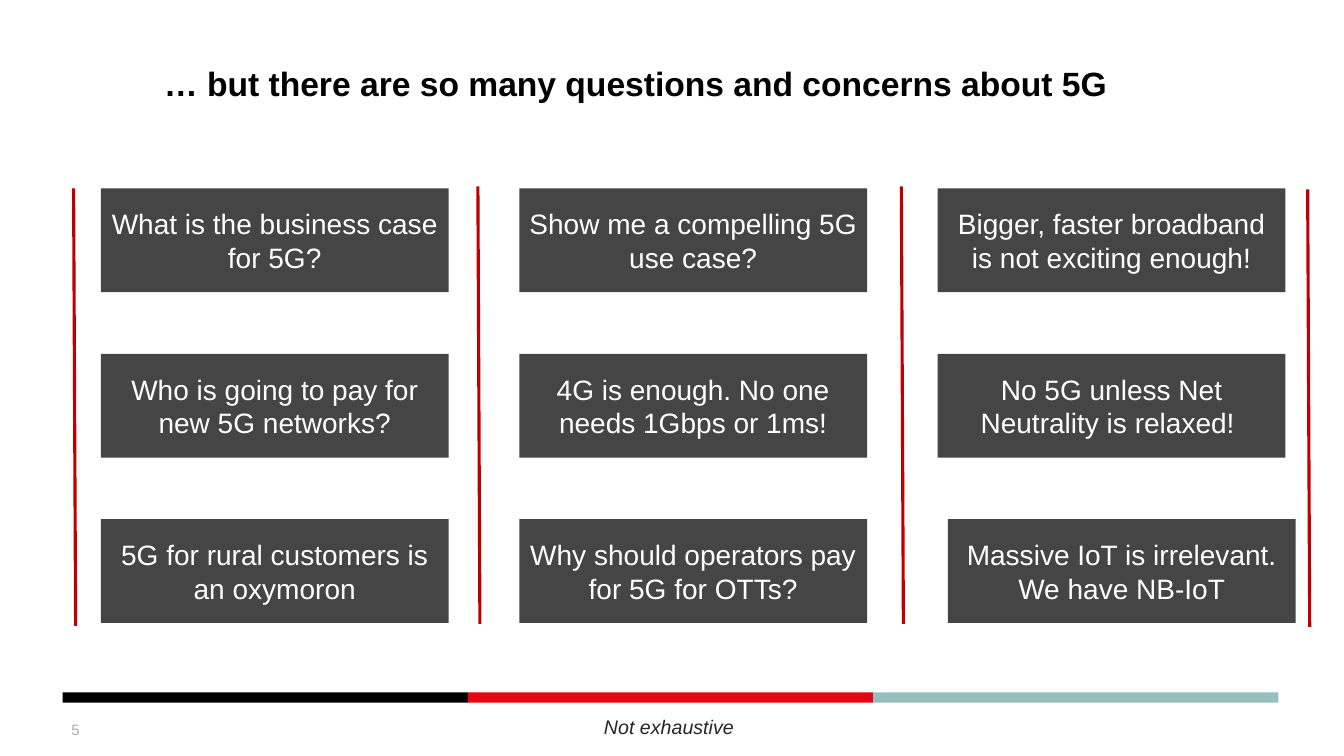
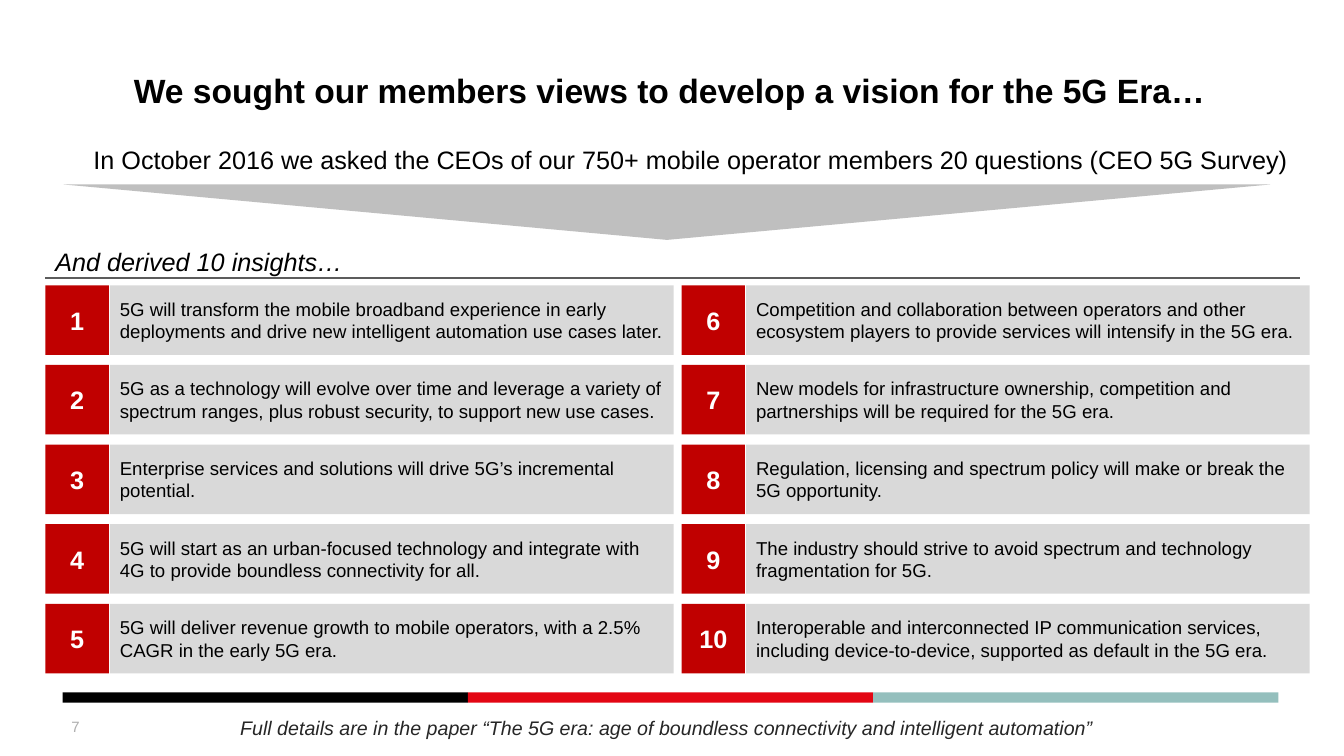
from lxml import etree
from pptx import Presentation
from pptx.dml.color import RGBColor
from pptx.enum.shapes import MSO_CONNECTOR, MSO_SHAPE
from pptx.enum.text import MSO_ANCHOR, PP_ALIGN
from pptx.oxml.ns import qn
from pptx.util import Inches, Pt

RECT, TRIANGLE = MSO_SHAPE.RECTANGLE, MSO_SHAPE.ISOSCELES_TRIANGLE
STRAIGHT = MSO_CONNECTOR.STRAIGHT
LEFT, CENTER = PP_ALIGN.LEFT, PP_ALIGN.CENTER
TOP, MIDDLE = MSO_ANCHOR.TOP, MSO_ANCHOR.MIDDLE

FONT = "Arial"
BLACK = RGBColor(0x00, 0x00, 0x00)
WHITE = RGBColor(0xFF, 0xFF, 0xFF)
RED = RGBColor(0xE3, 0x06, 0x13)
TEAL = RGBColor(0x94, 0xBF, 0xBD)
DARK_RED = RGBColor(0xC0, 0x00, 0x00)
CHARCOAL = RGBColor(0x45, 0x45, 0x45)
INK = RGBColor(0x26, 0x26, 0x26)
RULE_GREY = RGBColor(0x5C, 0x5C, 0x5C)
PAGE_GREY = RGBColor(0xAE, 0xAE, 0xAE)
ARROW_GREY = RGBColor(0xBF, 0xBF, 0xBF)
PANEL_GREY = RGBColor(0xD9, 0xD9, 0xD9)

SLIDE_W, SLIDE_H = 13.33, 7.5
BAND_COLORS = [BLACK, RED, TEAL]
BAND_LEFT, BAND_TOP, BAND_W, BAND_H = 0.62, 6.87, 4.02, 0.1

CONCERNS = {
    "title": "… but there are so many questions and concerns about 5G",
    "title_at": (1.53, 0.42),
    "page": "5",
    "page_top": 7.04,
    "footer": "Not exhaustive",
    "footer_at": (3.46, 7.04, 6.35, 0.34),
}
CARDS = [
    ["What is the business case for 5G?",
     "Show me a compelling 5G use case?",
     "Bigger, faster broadband is not exciting enough!"],
    ["Who is going to pay for new 5G networks?",
     "4G is enough. No one needs 1Gbps or 1ms!",
     "No 5G unless Net Neutrality is relaxed! "],
    ["5G for rural customers is an oxymoron",
     "Why should operators pay for 5G for OTTs?",
     "Massive IoT is irrelevant. We have NB-IoT"],
]
CARD_LEFT, CARD_TOP, CARD_W, CARD_H = 1, 1.87, 3.45, 1.03
CARD_STEP_X, CARD_STEP_Y = 4.15, 1.64
CARD_NUDGE = {(2, 2): 0.1}
DIVIDERS = [(0.73, 1.87), (4.74, 1.85), (8.94, 1.85), (12.97, 1.88)]
DIVIDER_SLANT, DIVIDER_H = 0.02, 4.34

INSIGHTS = {
    "title": "We sought our members views to develop a vision for the 5G Era…",
    "title_at": (1.23, 0.49),
    "page": "7",
    "page_top": 7.01,
    "footer": "Full details are in the paper “The 5G era: age of boundless "
              "connectivity and intelligent automation”",
    "footer_at": (1.87, 7.05, 9.49, 0.34),
}
SURVEY = ("In October 2016 we asked the CEOs of our 750+ mobile operator "
          "members 20 questions (CEO 5G Survey)")
LEAD_IN = "And derived 10 insights…"
FINDINGS = [
    "5G will transform the mobile broadband experience in early deployments "
    "and drive new intelligent automation use cases later.",
    "5G as a technology will evolve over time and leverage a variety of "
    "spectrum ranges, plus robust security, to support new use cases.",
    "Enterprise services and solutions will drive 5G’s incremental potential.",
    "5G will start as an urban-focused technology and integrate with 4G to "
    "provide boundless connectivity for all.",
    "5G will deliver revenue growth to mobile operators, with a 2.5% CAGR in "
    "the early 5G era.",
    "Competition and collaboration between operators and other\n"
    "ecosystem players to provide services will intensify in the 5G era.",
    "New models for infrastructure ownership, competition and\n"
    "partnerships will be required for the 5G era.",
    "Regulation, licensing and spectrum policy will make or break the 5G "
    "opportunity.",
    "The industry should strive to avoid spectrum and technology "
    "fragmentation for 5G.",
    "Interoperable and interconnected IP communication services, including "
    "device-to-device, supported as default in the 5G era.",
]
FINDING_ROWS = 5
FINDING_LEFT, FINDING_TOP = 0.45, 2.83
FINDING_STEP_X, FINDING_STEP_Y = 6.31, 0.79
NUMBER_W, PANEL_OFFSET, PANEL_W, FINDING_H = 0.63, 0.64, 5.59, 0.69


def write(sp, text, size=18, color=BLACK, bold=False, italic=False,
          align=LEFT, anchor=MIDDLE, insets=(0.1, 0.1)):
    tf = sp.text_frame
    tf.word_wrap = True
    tf.vertical_anchor = anchor
    tf.margin_left, tf.margin_right = map(Inches, insets)
    tf.margin_top = tf.margin_bottom = Inches(0.05)
    for i, line in enumerate(text.split("\n")):
        p = tf.paragraphs[0] if i == 0 else tf.add_paragraph()
        p.alignment = align
        r = p.add_run()
        r.text = line
        font = r.font
        font.name, font.size = FONT, Pt(size)
        font.bold, font.italic = bold, italic
        font.color.rgb = color


def add_text(s, box, text, **fmt):
    write(s.shapes.add_textbox(*map(Inches, box)), text, **fmt)


def add_block(s, box, fill, text="", kind=RECT, **fmt):
    sp = s.shapes.add_shape(kind, *map(Inches, box))
    sp.shadow.inherit = False
    sp.fill.solid()
    sp.fill.fore_color.rgb = fill
    sp.line.fill.background()
    if text:
        write(sp, text, **fmt)
    return sp


def add_line(s, x1, y1, x2, y2, color, width):
    line = s.shapes.add_connector(STRAIGHT, *map(Inches, (x1, y1, x2, y2)))
    line.line.color.rgb = color
    line.line.width = Pt(width)
    etree.SubElement(line._element.spPr, qn("a:effectLst"))


def add_base(prs, info):
    s = prs.slides.add_slide(prs.slide_layouts[6])
    for i, color in enumerate(BAND_COLORS):
        add_block(s, (BAND_LEFT + i * BAND_W, BAND_TOP, BAND_W, BAND_H), color)
    add_text(s, (*info["title_at"], 11.07, 0.8), info["title"],
             size=24, bold=True)
    add_text(s, (0.61, info["page_top"], 3.11, 0.4), info["page"],
             size=10.7, color=PAGE_GREY)
    add_text(s, info["footer_at"], info["footer"], size=14, color=INK,
             italic=True, align=CENTER, anchor=TOP)
    return s


def build_concerns(prs):
    s = add_base(prs, CONCERNS)
    for row, texts in enumerate(CARDS):
        for col, text in enumerate(texts):
            x = CARD_LEFT + col * CARD_STEP_X + CARD_NUDGE.get((row, col), 0)
            y = CARD_TOP + row * CARD_STEP_Y
            add_block(s, (x, y, CARD_W, CARD_H), CHARCOAL, text, size=20,
                      color=WHITE, align=CENTER, insets=(0.09, 0.09))
    for x, y in DIVIDERS:
        add_line(s, x, y, x + DIVIDER_SLANT, y + DIVIDER_H, DARK_RED, 2.25)


def build_insights(prs):
    s = add_base(prs, INSIGHTS)
    add_text(s, (0.54, 1.38, 12.62, 0.4), SURVEY, align=CENTER, anchor=TOP)
    arrow = add_block(s, (0.63, 1.83, 11.97, 0.55), ARROW_GREY, kind=TRIANGLE)
    arrow.rotation = 180
    add_text(s, (0.45, 2.39, 6.14, 0.46), LEAD_IN, italic=True, anchor=TOP)
    add_line(s, 0.45, 2.76, 12.89, 2.76, RULE_GREY, 1.5)
    for i, text in enumerate(FINDINGS):
        col, row = divmod(i, FINDING_ROWS)
        x = FINDING_LEFT + col * FINDING_STEP_X
        y = FINDING_TOP + row * FINDING_STEP_Y
        add_block(s, (x, y, NUMBER_W, FINDING_H), DARK_RED, str(i + 1),
                  color=WHITE, bold=True, align=CENTER, insets=(0.05, 0.05))
        add_block(s, (x + PANEL_OFFSET, y, PANEL_W, FINDING_H), PANEL_GREY,
                  text, size=13.3, insets=(0.1, 0.05))


def main():
    prs = Presentation()
    prs.slide_width, prs.slide_height = Inches(SLIDE_W), Inches(SLIDE_H)
    build_concerns(prs)
    build_insights(prs)
    prs.save("out.pptx")


if __name__ == "__main__":
    main()
